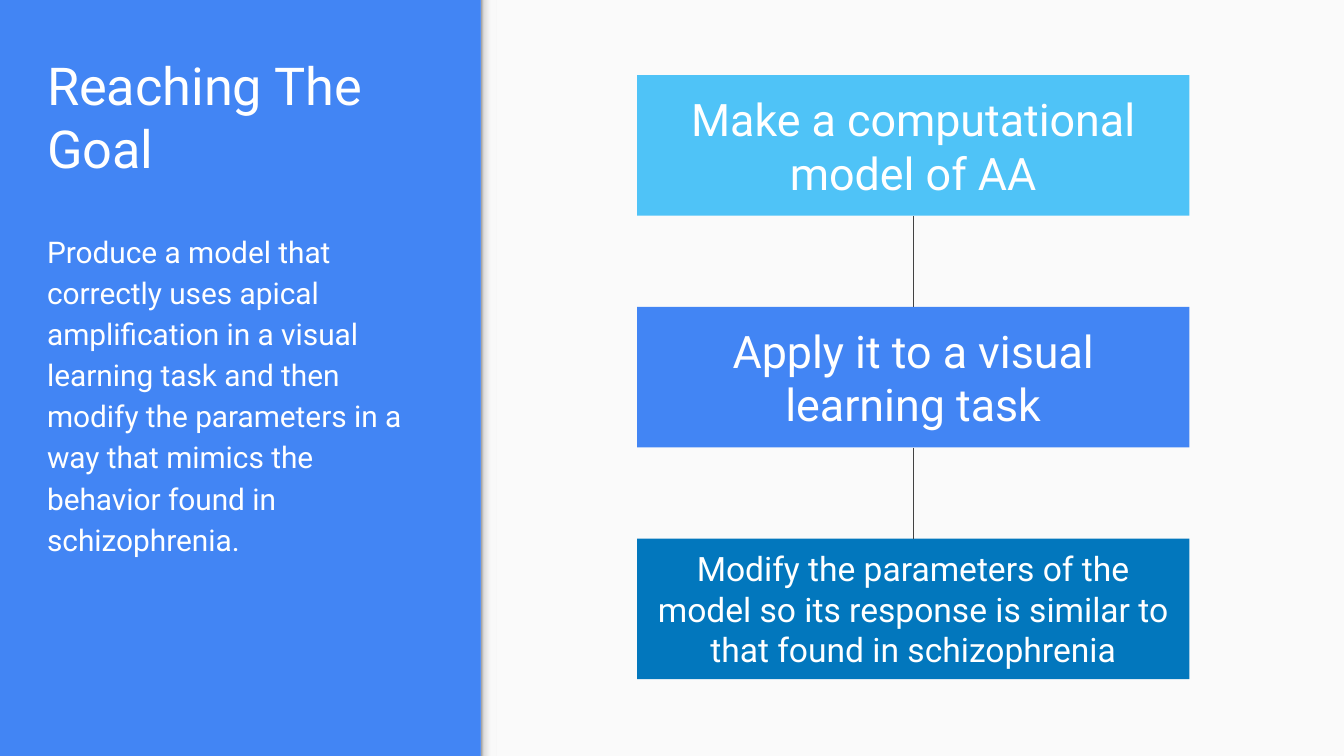
import copy
import pptx
import pptx.dml.color
import pptx.enum.shapes
import pptx.enum.text
import pptx.oxml.ns
import pptx.util

Cm = pptx.util.Cm
Pt = pptx.util.Pt
RECTANGLE = pptx.enum.shapes.MSO_SHAPE.RECTANGLE
ANCHOR = pptx.enum.text.MSO_ANCHOR
ALIGN = pptx.enum.text.PP_ALIGN


def color(hex_value):
    return pptx.dml.color.RGBColor.from_string(hex_value)


def write(shape, text, size, anchor, paragraph_format):
    frame = shape.text_frame
    frame.text = text
    frame_format = {
        "word_wrap": True,
        "auto_size": pptx.enum.text.MSO_AUTO_SIZE.NONE,
        "vertical_anchor": anchor,
        "margin_left": Cm(0.25),
        "margin_right": Cm(0.25),
        "margin_top": Cm(0.25),
        "margin_bottom": Cm(0.25),
    }
    for key, value in frame_format.items():
        setattr(frame, key, value)
    paragraph = frame.paragraphs[0]
    for key, value in paragraph_format.items():
        setattr(paragraph, key, value)
    font = paragraph.runs[0].font
    for key, value in {"name": "Roboto", "size": Pt(size)}.items():
        setattr(font, key, value)
    font.color.rgb = color("FFFFFF")


deck = pptx.Presentation()
deck.slide_width = Cm(25.4)
deck.slide_height = Cm(14.29)
slide = deck.slides.add_slide(deck.slide_layouts[1])
slide.background.fill.solid()
slide.background.fill.fore_color.rgb = color("4285F4")

panel = slide.shapes.add_shape(RECTANGLE, Cm(9.09), 0, Cm(16.31), deck.slide_height)
panel.shadow.inherit = False
panel.fill.solid()
panel.fill.fore_color.rgb = color("FAFAFA")
panel.line.fill.background()

panel_edge = slide.shapes.add_shape(RECTANGLE, Cm(9.09), 0, Cm(0.3), deck.slide_height)
panel_edge.shadow.inherit = False
panel_edge.line.fill.background()
panel_edge.fill.gradient()
panel_edge.fill.gradient_angle = 0
stop_list = panel_edge.element.spPr.find(".//" + pptx.oxml.ns.qn("a:gsLst"))
stop_list.append(copy.deepcopy(stop_list[-1]))
edge_stops = [(0, "999999"), (0.2, "DEDEDE"), (0.64, "F9F9F9")]
for stop, (position, shade) in zip(panel_edge.fill.gradient_stops, edge_stops):
    stop.position = position
    stop.color.rgb = color(shade)

heading = slide.shapes.title
goal = slide.placeholders[1]
for part, top, height in [(heading, 0.99, 2.64), (goal, 4.06, 8.79)]:
    part.left, part.top = Cm(0.64), Cm(top)
    part.width, part.height = Cm(7.8), Cm(height)

write(heading, "Reaching The Goal", 28, ANCHOR.BOTTOM, {"alignment": ALIGN.LEFT})
write(
    goal,
    "Produce a model that correctly uses apical amplification in a visual learning task "
    "and then modify the parameters in a way that mimics the behavior found in schizophrenia.",
    16,
    ANCHOR.TOP,
    {"alignment": ALIGN.LEFT, "line_spacing": 1.15, "space_before": Pt(0), "space_after": Pt(16)},
)
goal_properties = goal.text_frame.paragraphs[0]._p.get_or_add_pPr()
for key in ("marL", "indent"):
    goal_properties.set(key, "0")
goal_properties.append(pptx.oxml.parse_xml(f"<a:buNone {pptx.oxml.ns.nsdecls('a')}/>"))

steps = [
    ("Make a computational model of AA", 24, "4FC3F7"),
    ("Apply it to a visual learning task", 24, "4285F4"),
    ("Modify the parameters of the model so its response is similar to that found in schizophrenia", 18, "0277BD"),
]
previous_step = None
for index, (text, size, fill) in enumerate(steps):
    step = slide.shapes.add_shape(RECTANGLE, Cm(12.04), Cm(1.42 + 4.38 * index), Cm(10.44), Cm(2.66))
    step.shadow.inherit = False
    step.fill.solid()
    step.fill.fore_color.rgb = color(fill)
    step.line.fill.background()
    write(step, text, size, ANCHOR.MIDDLE, {"alignment": ALIGN.CENTER})
    if previous_step is not None:
        link = slide.shapes.add_connector(pptx.enum.shapes.MSO_CONNECTOR.STRAIGHT, 0, 0, 0, 0)
        link.begin_connect(previous_step, 2)
        link.end_connect(step, 0)
        link.line.color.rgb = color("424242")
        link.line.width = Pt(0.75)
        link.element.spPr.append(pptx.oxml.parse_xml(f"<a:effectLst {pptx.oxml.ns.nsdecls('a')}/>"))
    previous_step = step

deck.save("out.pptx")
